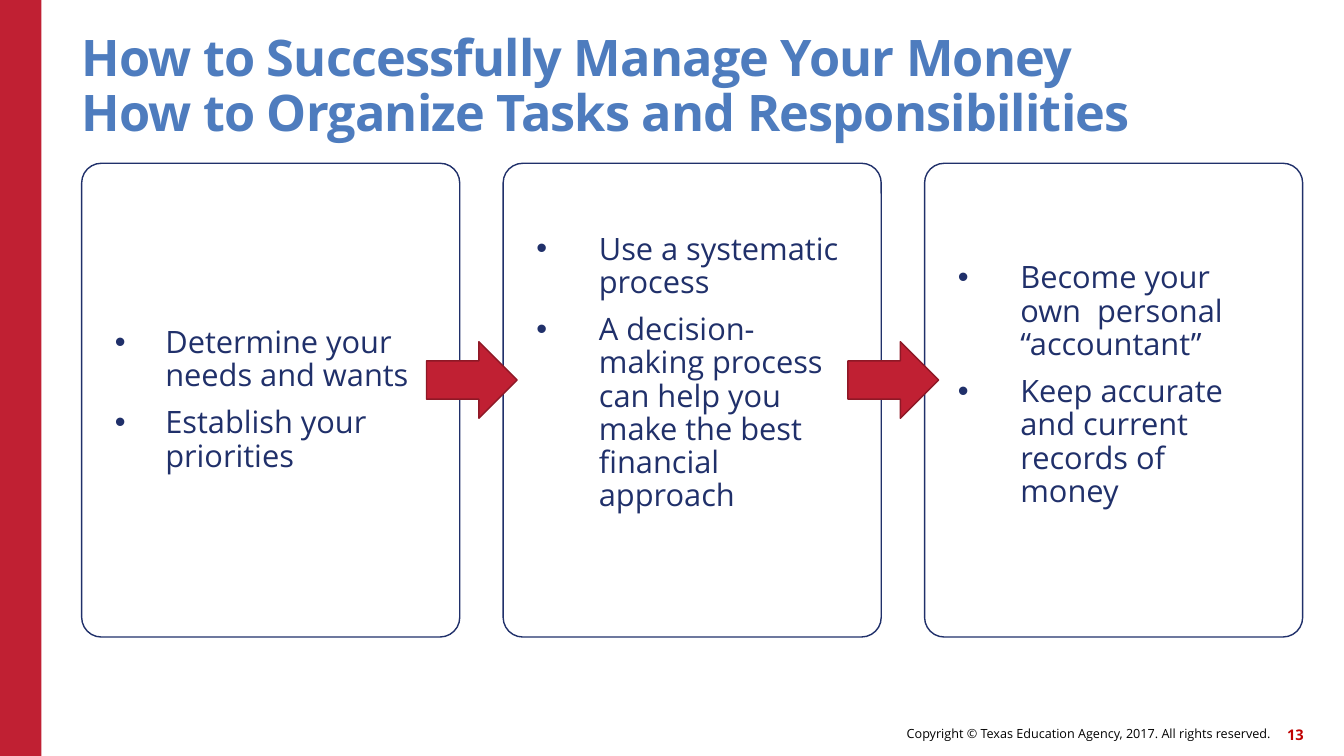
from lxml.etree import SubElement
from pptx import Presentation
from pptx.dml.color import RGBColor
from pptx.enum.shapes import MSO_SHAPE as Shape
from pptx.enum.text import MSO_ANCHOR as Anchor, PP_ALIGN as Align
from pptx.oxml.ns import qn
from pptx.util import Inches, Pt

TITLE = "How to Successfully Manage Your Money\vHow to Organize Tasks and Responsibilities"
CARDS = [
    {"bullets": ["Determine your needs and wants", "Establish your priorities"],
     "indent": 0.5, "lift": 0},
    {"bullets": ["Use a systematic process",
                 "A decision-making process can help you make the best financial approach"],
     "indent": 0.62, "lift": 0.53},
    {"bullets": ["Become your own  personal “accountant”",
                 "Keep accurate and current records of money"],
     "indent": 0.62, "lift": 0.29},
]
COPYRIGHT = "Copyright © Texas Education Agency, 2017. All rights reserved."
PAGE_NUMBER = "13"

FONT = "Open Sans"
RED, DARK_RED, NAVY, BLUE = "C02033", "8E1826", "20306A", "4E7CBE"
WIDTH, HEIGHT = 13.33, 7.5
LEFT, CARD_TOP, CARD_WIDTH, CARD_HEIGHT = 0.81, 1.62, 3.75, 4.7
CARD_STEP = 4.18
PAD_X, PAD_Y = 0.33, 0.31
ARROW_WIDTH, ARROW_HEIGHT = 0.9, 0.76


def color(value):
    return RGBColor.from_string(value)


def add_figure(page, kind, area, fill=None, line=None):
    figure = page.shapes.add_shape(kind, *map(Inches, area))
    figure.shadow.inherit = False
    if fill:
        figure.fill.solid()
        figure.fill.fore_color.rgb = color(fill)
    else:
        figure.fill.background()
    if line:
        figure.line.color.rgb = color(line)
        figure.line.width = Pt(1)
    else:
        figure.line.fill.background()
    return figure


def add_text(page, area, lines, size, ink, bold=False, align=Align.LEFT,
             anchor=Anchor.MIDDLE, spacing=1.0, lift=0, indent=0, tracking=0):
    frame = page.shapes.add_textbox(*map(Inches, area)).text_frame
    frame.word_wrap = True
    frame.vertical_anchor = anchor
    frame.margin_left = frame.margin_right = frame.margin_top = 0
    frame.margin_bottom = Inches(lift)
    for index, line in enumerate(lines):
        para = frame.add_paragraph() if index else frame.paragraphs[0]
        para.text = line
        para.alignment = align
        para.line_spacing = spacing
        if index:
            para.space_before = Pt(10)
        if indent:
            props = para._p.get_or_add_pPr()
            props.set("marL", str(Inches(indent)))
            props.set("indent", str(-Inches(indent)))
            SubElement(props, qn("a:buFont"), typeface="Arial")
            SubElement(props, qn("a:buChar"), char="•")
        for span in para.runs:
            span.font.name = FONT
            span.font.size = Pt(size)
            span.font.bold = bold
            span.font.color.rgb = color(ink)
            if tracking:
                span.font._element.set("spc", str(tracking))


def main():
    deck = Presentation()
    deck.slide_width, deck.slide_height = Inches(WIDTH), Inches(HEIGHT)
    page = deck.slides.add_slide(deck.slide_layouts[6])

    add_figure(page, Shape.RECTANGLE, (0, 0, 0.41, HEIGHT), fill=RED)
    add_text(page, (6.14, 7.12, 6.46, 0.32), [COPYRIGHT], 9, "000000", align=Align.RIGHT)
    add_text(page, (12.51, 7.13, 0.42, 0.32), [PAGE_NUMBER], 10.5, "C00000",
             bold=True, align=Align.RIGHT)
    add_text(page, (LEFT, 0.45, 11, 0.96), [TITLE], 36, BLUE, bold=True,
             anchor=Anchor.BOTTOM, spacing=0.9, tracking=-60)

    for index, card in enumerate(CARDS):
        left = LEFT + index * CARD_STEP
        outline = add_figure(page, Shape.ROUNDED_RECTANGLE,
                             (left, CARD_TOP, CARD_WIDTH, CARD_HEIGHT), line=NAVY)
        outline.adjustments[0] = 0.052
        area = (left + PAD_X, CARD_TOP + PAD_Y,
                CARD_WIDTH - 2 * PAD_X, CARD_HEIGHT - 2 * PAD_Y)
        add_text(page, area, card["bullets"], 22, NAVY, spacing=0.9,
                 lift=card["lift"], indent=card["indent"])

    for index in range(len(CARDS) - 1):
        left = LEFT + index * CARD_STEP + CARD_WIDTH - PAD_X
        top = CARD_TOP + (CARD_HEIGHT - ARROW_HEIGHT) / 2 - 0.2
        add_figure(page, Shape.RIGHT_ARROW, (left, top, ARROW_WIDTH, ARROW_HEIGHT),
                   fill=RED, line=DARK_RED)

    deck.save("out.pptx")


if __name__ == "__main__":
    main()
